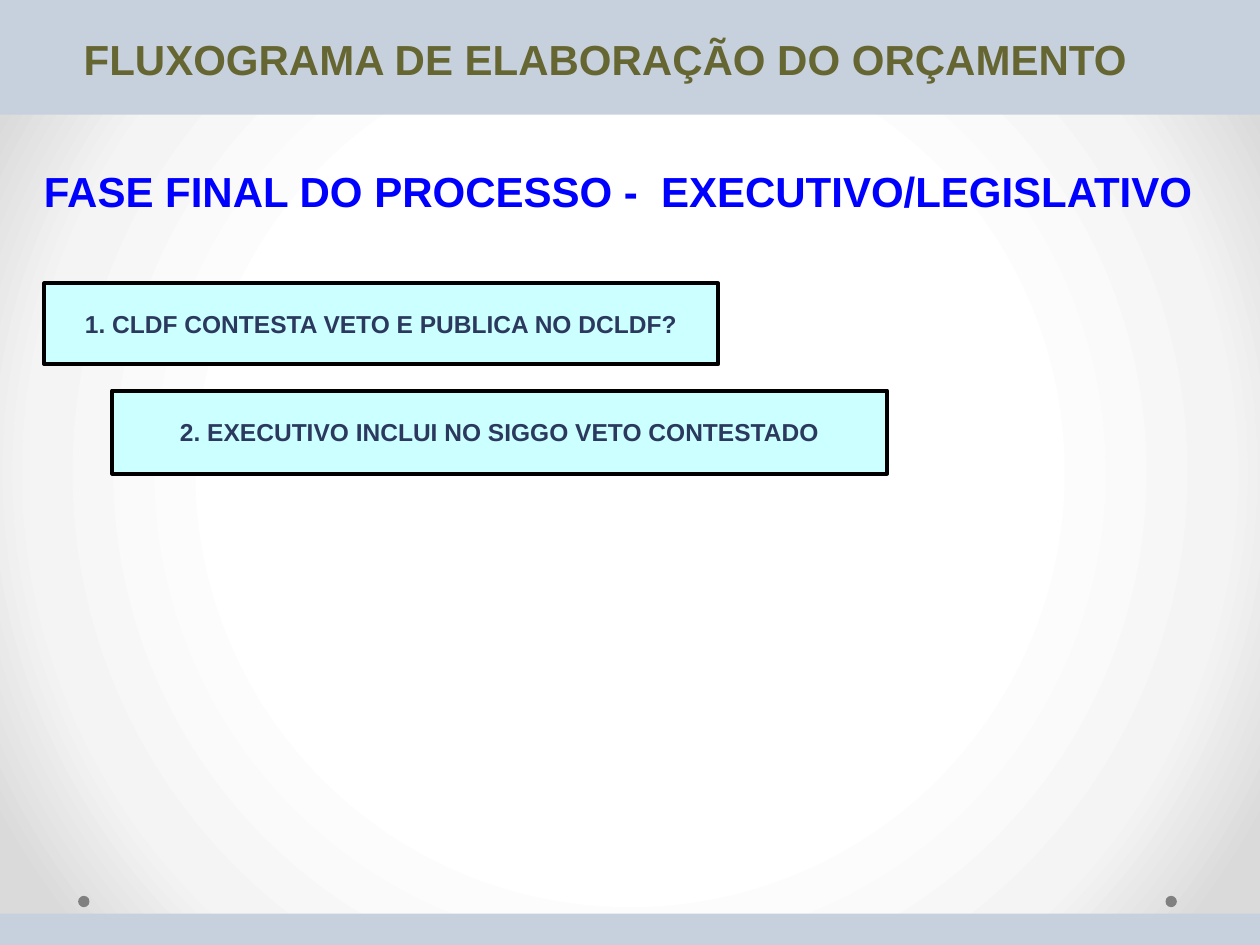
from dataclasses import dataclass

from lxml.etree import SubElement
from pptx import Presentation
from pptx.dml.color import RGBColor
from pptx.enum.shapes import MSO_SHAPE as Preset
from pptx.enum.text import MSO_ANCHOR as Anchor, MSO_AUTO_SIZE as AutoSize, PP_ALIGN as Align
from pptx.oxml.ns import qn
from pptx.shapes.autoshape import Shape
from pptx.slide import Slide
from pptx.util import Inches, Pt

WIDTH, HEIGHT = 10, 7.5
FONT = "Arial"
COLORS = {
    "band": "C7D1DE",
    "dot": "808080",
    "title": "666633",
    "heading": "0000FF",
    "step": "CCFFFF",
    "step_text": "2C395E",
    "border": "000000",
}
GLOW_STOPS = ((50, "FFFFFF"), (76, "F4F4F4"), (92, "DADADA"))


@dataclass(frozen=True)
class Box:
    """Left, top, width and height in inches."""
    left: float
    top: float
    width: float
    height: float

    def lengths(self) -> list[int]:
        return [Inches(n) for n in (self.left, self.top, self.width, self.height)]


@dataclass(frozen=True)
class Step:
    box: Box
    text: str


BANDS = (Box(0, 0, WIDTH, 0.91), Box(0, 7.25, WIDTH, 0.28))
DOTS = tuple(Box(left, 7.11, 0.09, 0.09) for left in (0.62, 9.25))
STEPS = (
    Step(Box(0.35, 2.25, 5.35, 0.64), "1. CLDF CONTESTA VETO E PUBLICA NO DCLDF?"),
    Step(Box(0.89, 3.1, 6.15, 0.66), "2. EXECUTIVO INCLUI NO SIGGO VETO CONTESTADO"),
)


def paint_background(slide: Slide) -> None:
    """Fill the background with a circular gradient spreading from the centre."""
    slide.background.fill.gradient()
    gradient = next(slide.element.iter(qn("a:gradFill")))
    for child in list(gradient):
        gradient.remove(child)
    stops = SubElement(gradient, qn("a:gsLst"))
    for position, color in GLOW_STOPS:
        stop = SubElement(stops, qn("a:gs"), pos=str(position * 1000))
        SubElement(stop, qn("a:srgbClr"), val=color)
    circle = SubElement(gradient, qn("a:path"), path="circle")
    SubElement(circle, qn("a:fillToRect"), l="50000", t="50000", r="50000", b="50000")


def add_filled(slide: Slide, preset: Preset, box: Box, color: str) -> Shape:
    shape = slide.shapes.add_shape(preset, *box.lengths())
    shape.shadow.inherit = False
    shape.fill.solid()
    shape.fill.fore_color.rgb = RGBColor.from_string(COLORS[color])
    shape.line.fill.background()
    return shape


def write(shape: Shape, text: str, size: int, color: str, align: Align, wrap: bool) -> None:
    frame = shape.text_frame
    frame.auto_size = AutoSize.NONE
    frame.word_wrap = wrap
    frame.vertical_anchor = Anchor.MIDDLE
    paragraph = frame.paragraphs[0]
    paragraph.alignment = align
    run = paragraph.add_run()
    run.text = text
    run.font.name = FONT
    run.font.size = Pt(size)
    run.font.bold = True
    run.font.color.rgb = RGBColor.from_string(COLORS[color])


def add_title(slide: Slide, box: Box, text: str) -> None:
    """Place the title placeholder in front of the shapes drawn so far."""
    title = slide.shapes.title
    title.left, title.top, title.width, title.height = box.lengths()
    write(title, text, 24, "title", Align.CENTER, True)
    slide.shapes.element.append(title.element)


def add_step(slide: Slide, step: Step) -> None:
    shape = add_filled(slide, Preset.RECTANGLE, step.box, "step")
    shape.line.color.rgb = RGBColor.from_string(COLORS["border"])
    shape.line.width = Pt(2.25)
    write(shape, step.text, 14, "step_text", Align.CENTER, False)


def main() -> None:
    presentation = Presentation()
    presentation.slide_width, presentation.slide_height = Inches(WIDTH), Inches(HEIGHT)
    slide = presentation.slides.add_slide(presentation.slide_layouts.get_by_name("Title Only"))
    paint_background(slide)
    for dot in DOTS:
        add_filled(slide, Preset.OVAL, dot, "dot")
    for band in BANDS:
        add_filled(slide, Preset.RECTANGLE, band, "band")
    add_title(slide, Box(-0.15, 0.21, WIDTH, 0.51), "FLUXOGRAMA DE ELABORAÇÃO DO ORÇAMENTO ")
    heading = slide.shapes.add_textbox(*Box(0.25, 1.26, 9.59, 0.51).lengths())
    write(heading, "FASE FINAL DO PROCESSO -  EXECUTIVO/LEGISLATIVO",
          24, "heading", Align.LEFT, True)
    for step in STEPS:
        add_step(slide, step)
    presentation.save("out.pptx")


if __name__ == "__main__":
    main()
